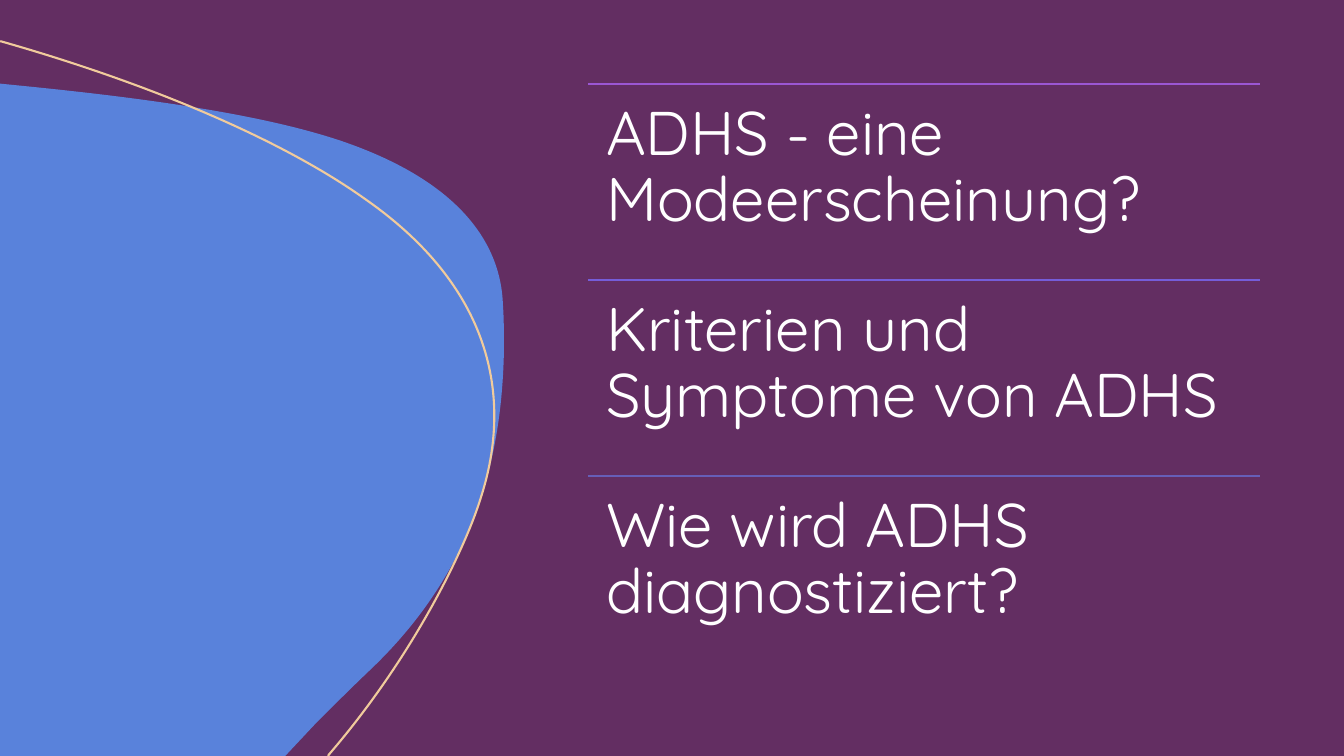
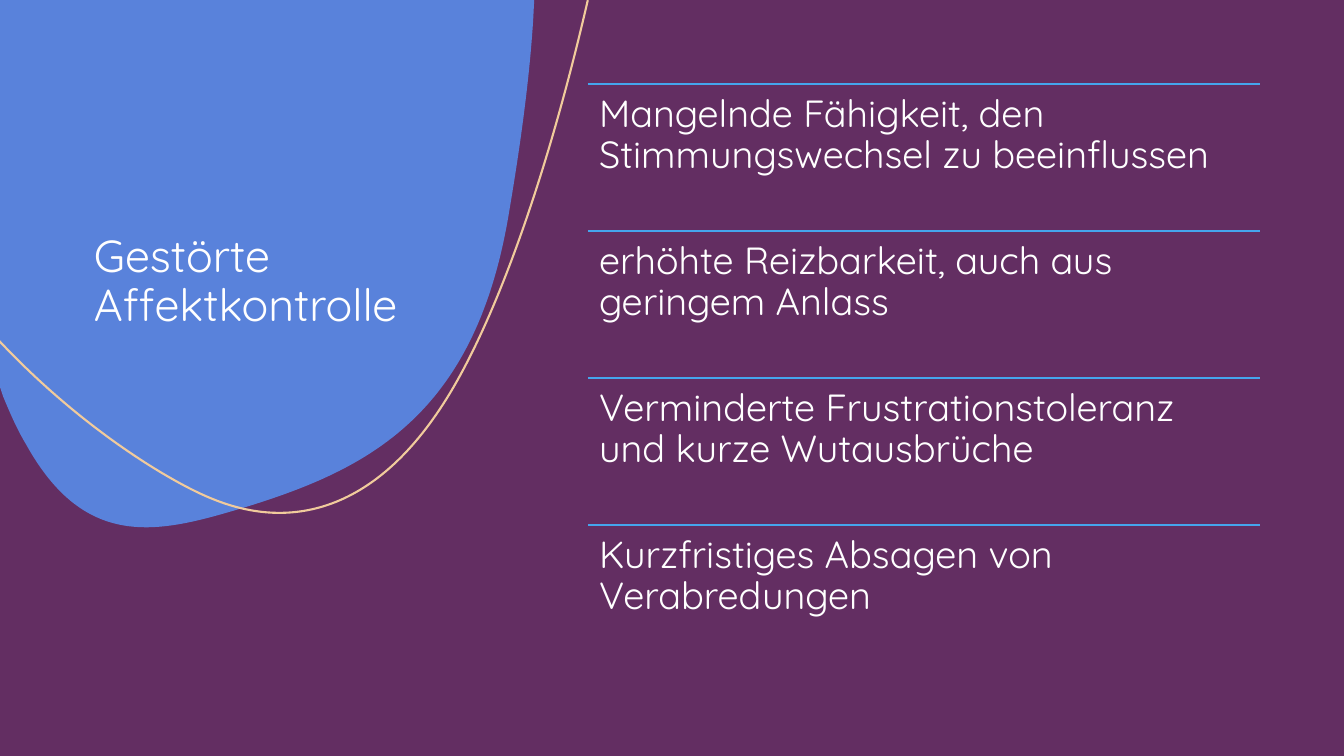
from lxml import etree
from pptx import Presentation
from pptx.dml.color import RGBColor
from pptx.enum.shapes import MSO_CONNECTOR, MSO_SHAPE
from pptx.enum.text import MSO_ANCHOR
from pptx.oxml.ns import qn
from pptx.util import Inches, Pt

STRAIGHT = MSO_CONNECTOR.STRAIGHT
RECTANGLE = MSO_SHAPE.RECTANGLE
TOP, BOTTOM = MSO_ANCHOR.TOP, MSO_ANCHOR.BOTTOM

PLUM = RGBColor(0x63, 0x2E, 0x62)
BLUE = RGBColor(0x59, 0x82, 0xDB)
SAND = RGBColor(0xF1, 0xCB, 0x9C)
WHITE = RGBColor(0xFF, 0xFF, 0xFF)
VIOLET = RGBColor(0x9B, 0x57, 0xD3)
INDIGO = RGBColor(0x75, 0x5D, 0xD9)
SLATE = RGBColor(0x66, 0x5E, 0xB8)
SKY = RGBColor(0x45, 0xA5, 0xED)

FONT = "Quicksand"
SLIDE_WIDTH, SLIDE_HEIGHT = 40 / 3, 7.5
MARGIN = SLIDE_HEIGHT / 9
LIST_WIDTH = SLIDE_WIDTH / 2
LIST_LEFT = SLIDE_WIDTH - MARGIN - LIST_WIDTH
LIST_HEIGHT = SLIDE_HEIGHT - 2 * MARGIN
CURVE_STEPS = 24

# Outlines in inches: a start point, then lines (x, y) or
# Bézier curves (control 1, control 2, end)
SLIDES = [
    {
        "blob": [
            (5, 3.47),
            (4.98, 4.53, 4.72, 5.64, 3.69, 6.63),
            (3.5, 6.81, 3.31, 7, 3.13, 7.18),
            (2.83, 7.5), (0, 7.5), (0, 0.83), (0.3, 0.86),
            (1.49, 0.98, 2.62, 1.14, 3.39, 1.4),
            (4.59, 1.81, 4.97, 2.44, 4.99, 3.02),
            (5, 3.17, 5, 3.32, 5, 3.47),
        ],
        "arc": [
            (0, 0.41), (0.01, 0.41),
            (1.52, 0.84, 2.82, 1.4, 3.63, 1.98),
            (4.86, 2.84, 5.1, 3.92, 4.77, 4.94),
            (4.63, 5.4, 4.13, 6.48, 3.26, 7.49),
            (3.26, 7.5),
        ],
        "title": None,
        "size": 44,
        "inset": 0.18,
        "items": [
            ("ADHS - eine Modeerscheinung?", VIOLET),
            ("Kriterien und Symptome von ADHS", INDIGO),
            ("Wie wird ADHS diagnostiziert?", SLATE),
        ],
    },
    {
        "blob": [
            (5.3, 0), (5.29, 0.2),
            (5.25, 0.82, 5.16, 1.46, 5.05, 2.11),
            (4.72, 4.11, 3.67, 4.65, 2.44, 5.03),
            (1.61, 5.28, 0.86, 5.49, 0.26, 4.41),
            (0.17, 4.26, 0.1, 4.1, 0.03, 3.93),
            (0, 3.84), (0, 0), (5.3, 0),
        ],
        "arc": [
            (5.83, 0), (5.83, 0.01),
            (5.47, 1.57, 5.01, 2.93, 4.54, 3.77),
            (3.83, 5.04, 2.94, 5.29, 2.11, 4.95),
            (1.73, 4.8, 0.84, 4.28, 0, 3.39),
            (0, 3.38),
        ],
        "title": "Gestörte Affektkontrolle",
        "size": 27,
        "inset": 0.11,
        "items": [
            ("Mangelnde Fähigkeit, den Stimmungswechsel zu beeinflussen", SKY),
            ("erhöhte Reizbarkeit, auch aus geringem Anlass", SKY),
            ("Verminderte Frustrationstoleranz und kurze Wutausbrüche", SKY),
            ("Kurzfristiges Absagen von Verabredungen", SKY),
        ],
    },
]


def flatten(outline):
    """Sample the curves, so that the true extent is known."""
    points = [outline[0]]
    for segment in outline[1:]:
        if len(segment) == 2:
            points.append(segment)
            continue
        x0, y0 = points[-1]
        x1, y1, x2, y2, x3, y3 = segment
        for step in range(1, CURVE_STEPS + 1):
            t = step / CURVE_STEPS
            u = 1 - t
            a, b, c, d = u ** 3, 3 * u * u * t, 3 * u * t * t, t ** 3
            points.append((a * x0 + b * x1 + c * x2 + d * x3,
                           a * y0 + b * y1 + c * y2 + d * y3))
    return points


def add_outline(page, outline, close):
    points = [(Inches(x), Inches(y)) for x, y in flatten(outline)]
    builder = page.shapes.build_freeform(*points[0])
    builder.add_line_segments(points[1:], close=close)
    shape = builder.convert_to_shape()
    shape.shadow.inherit = False

    # Exact Bézier segments take the place of the samples
    track = shape._element.spPr.find(".//" + qn("a:path"))
    for sample in track.findall(qn("a:lnTo")):
        track.remove(sample)
    for index, segment in enumerate(outline[1:], start=1):
        tag = "a:lnTo" if len(segment) == 2 else "a:cubicBezTo"
        command = etree.Element(qn(tag))
        for x, y in zip(segment[::2], segment[1::2]):
            etree.SubElement(command, qn("a:pt"),
                             x=str(Inches(x) - shape.left),
                             y=str(Inches(y) - shape.top))
        track.insert(index, command)
    return shape


def paint(shape, color):
    shape.fill.solid()
    shape.fill.fore_color.rgb = color
    shape.line.fill.background()


def add_text(page, text, left, top, width, height, size, insets, anchor=TOP):
    box = page.shapes.add_textbox(Inches(left), Inches(top),
                                  Inches(width), Inches(height))
    frame = box.text_frame
    frame.word_wrap = True
    frame.vertical_anchor = anchor
    frame.margin_left = frame.margin_right = Inches(insets[0])
    frame.margin_top = frame.margin_bottom = Inches(insets[1])
    para = frame.paragraphs[0]
    para.text = text
    para.line_spacing = 0.9
    para.font.name = FONT
    para.font.size = Pt(size)
    para.font.color.rgb = WHITE


def add_rule(page, top, color):
    right = LIST_LEFT + LIST_WIDTH
    rule = page.shapes.add_connector(STRAIGHT, Inches(LIST_LEFT), Inches(top),
                                     Inches(right), Inches(top))
    rule.line.color.rgb = color
    rule.line.width = Pt(1)
    etree.SubElement(rule._element.spPr, qn("a:effectLst"))


def build_slide(deck, content):
    page = deck.slides.add_slide(deck.slide_layouts[6])

    # Plum surface
    surface = page.shapes.add_shape(RECTANGLE, 0, 0, deck.slide_width,
                                    deck.slide_height)
    surface.shadow.inherit = False
    paint(surface, PLUM)

    # Blue area and the sand-coloured line around it
    paint(add_outline(page, content["blob"], close=True), BLUE)
    arc = add_outline(page, content["arc"], close=False)
    arc.fill.background()
    arc.line.color.rgb = SAND
    arc.line.width = Pt(1.5)

    # Title
    if content["title"]:
        add_text(page, content["title"], MARGIN, MARGIN, 3.33, 2.5,
                 size=32, insets=(0.1, 0.05), anchor=BOTTOM)

    # Ruled list
    step = LIST_HEIGHT / len(content["items"])
    insets = (content["inset"], content["inset"])
    for index, (text, color) in enumerate(content["items"]):
        top = MARGIN + index * step
        add_rule(page, top, color)
        add_text(page, text, LIST_LEFT, top, LIST_WIDTH, step,
                 content["size"], insets)


def main():
    deck = Presentation()
    deck.slide_width = Inches(SLIDE_WIDTH)
    deck.slide_height = Inches(SLIDE_HEIGHT)
    background = deck.slide_master.background.fill
    background.solid()
    background.fore_color.rgb = PLUM
    for content in SLIDES:
        build_slide(deck, content)
    deck.save("out.pptx")


if __name__ == "__main__":
    main()
